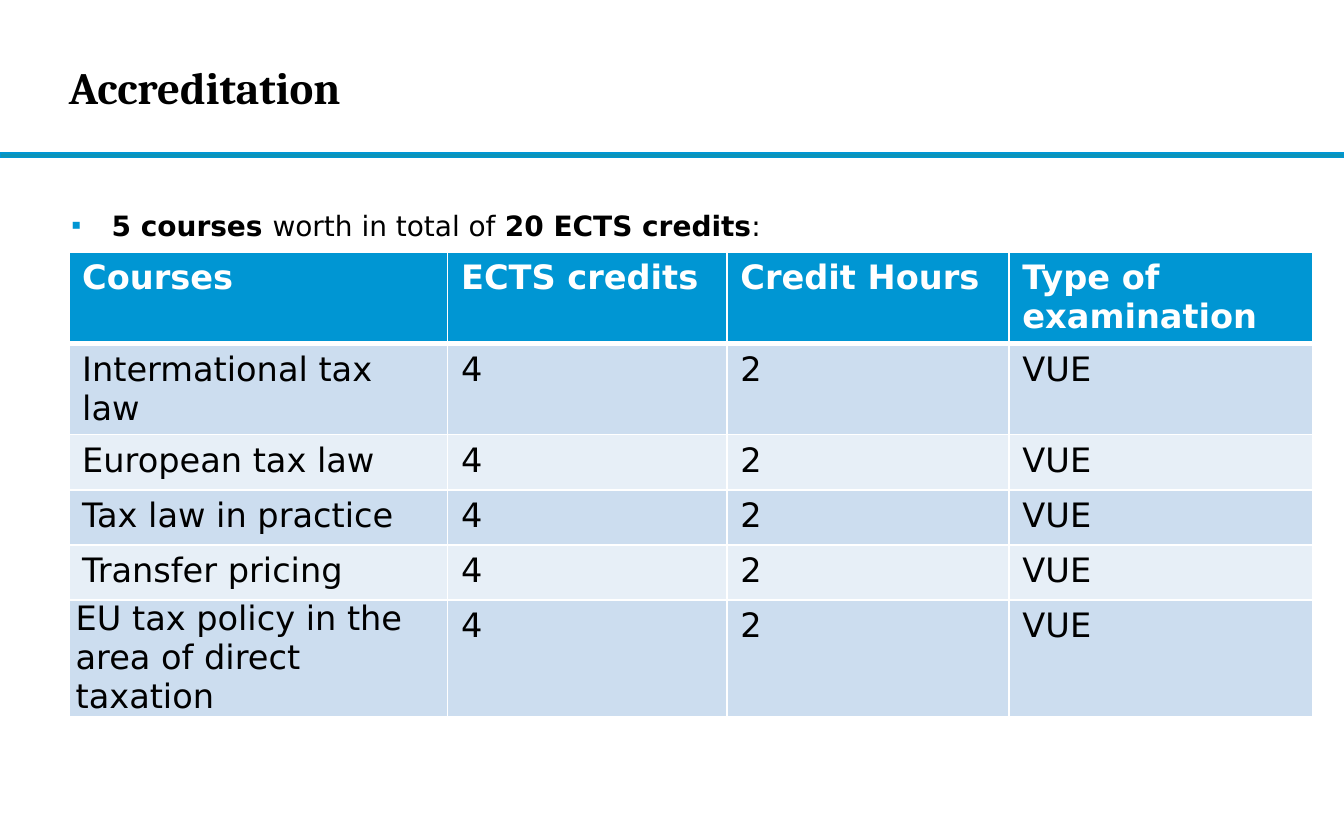
from lxml import etree
from pptx import Presentation
from pptx.dml.color import RGBColor
from pptx.enum.shapes import MSO_SHAPE
from pptx.enum.text import MSO_ANCHOR, MSO_AUTO_SIZE, PP_ALIGN
from pptx.oxml.ns import qn
from pptx.util import Cm, Pt

RECTANGLE = MSO_SHAPE.RECTANGLE
TOP, MIDDLE = MSO_ANCHOR.TOP, MSO_ANCHOR.MIDDLE
NO_FIT, LEFT = MSO_AUTO_SIZE.NONE, PP_ALIGN.LEFT

# Content
TITLE = "Accreditation"
INTRO = [("5 courses ", True), ("worth in total of ", False),
         ("20 ECTS credits", True), (":", False)]
HEADERS = ["Courses", "ECTS credits", "Credit Hours", "Type of examination"]
COURSES = ["Intermational tax law", "European tax law", "Tax law in practice",
           "Transfer pricing", "EU tax policy in the area of direct taxation"]
COURSE_VALUES = ["4", "2", "VUE"]
ROWS = [HEADERS] + [[course] + COURSE_VALUES for course in COURSES]

# Theme and layout
THEME = {
    "accent": "0096D3", "rule": "0C94B7", "bands": ("CCDDEF", "E7EFF7"),
    "text": "000000", "white": "FFFFFF",
    "heading_font": "Cambria", "body_font": "DejaVu Sans",
    "title_size": 24, "intro_size": 15, "table_size": 18,
}
COLUMN_WIDTHS = [7.16, 5.28, 5.33, 5.74]
ROW_HEIGHT = 1.04
MARGIN_LEFT = 1.3
RULE_TOP = 2.9


def set_attrs(obj, values):
    for name, value in values.items():
        setattr(obj, name, value)


def format_font(font, name, size, color, bold):
    set_attrs(font, {"name": name, "size": Pt(size), "bold": bold})
    font.color.rgb = RGBColor.from_string(color)


def place(sp, left, top, width, height):
    set_attrs(sp, {"left": Cm(left), "top": Cm(top),
                   "width": Cm(width), "height": Cm(height)})


def format_frame(tf, anchor, top=0, bottom=0):
    set_attrs(tf, {"margin_left": 0, "margin_right": 0, "margin_top": Cm(top),
                   "margin_bottom": Cm(bottom), "word_wrap": True,
                   "auto_size": NO_FIT, "vertical_anchor": anchor})


def add_bullet(p, char, color, left, hanging):
    pPr = p._p.get_or_add_pPr()
    pPr.set("marL", str(Cm(left)))
    pPr.set("indent", str(-Cm(hanging)))
    bu_color = etree.SubElement(pPr, qn("a:buClr"))
    etree.SubElement(bu_color, qn("a:srgbClr"), val=color)
    etree.SubElement(pPr, qn("a:buChar"), char=char)


def add_borders(cell, widths):
    tcPr = cell._tc.get_or_add_tcPr()
    for i, (side, width) in enumerate(widths.items()):
        ln = etree.Element(qn("a:ln" + side), w=str(Pt(width)))
        fill = etree.SubElement(ln, qn("a:solidFill"))
        etree.SubElement(fill, qn("a:srgbClr"), val=THEME["white"])
        tcPr.insert(i, ln)


def add_title(s):
    sp = s.shapes.title
    place(sp, MARGIN_LEFT, 0.38, 19, 2.51)
    format_frame(sp.text_frame, MIDDLE)
    p = sp.text_frame.paragraphs[0]
    p.alignment = LEFT
    r = p.add_run()
    r.text = TITLE
    format_font(r.font, THEME["heading_font"], THEME["title_size"], THEME["text"], True)


def add_rule(s, width):
    sp = s.shapes.add_shape(RECTANGLE, 0, Cm(RULE_TOP), width, Cm(0.08))
    sp.shadow.inherit = False
    sp.fill.solid()
    sp.fill.fore_color.rgb = RGBColor.from_string(THEME["rule"])
    sp.line.color.rgb = RGBColor.from_string(THEME["accent"])
    sp.line.width = Pt(1)


def add_intro(s):
    sp = s.placeholders[1]
    place(sp, 0.61, RULE_TOP, 24.2, 12.6)
    format_frame(sp.text_frame, TOP, top=1.04, bottom=0.13)
    p = sp.text_frame.paragraphs[0]
    set_attrs(p, {"level": 1, "space_before": Pt(0), "space_after": Pt(4)})
    add_bullet(p, "▪", THEME["accent"], left=1.5, hanging=0.76)
    for text, bold in INTRO:
        r = p.add_run()
        r.text = text
        format_font(r.font, THEME["body_font"], THEME["intro_size"], THEME["text"], bold)


def add_course_table(s):
    frame = s.shapes.add_table(
        len(ROWS), len(HEADERS), Cm(MARGIN_LEFT), Cm(4.76),
        Cm(sum(COLUMN_WIDTHS)), Cm(ROW_HEIGHT * len(ROWS)))
    table = frame.table
    for column, width in zip(table.columns, COLUMN_WIDTHS):
        column.width = Cm(width)
    for i, values in enumerate(ROWS):
        table.rows[i].height = Cm(ROW_HEIGHT)
        header = i == 0
        fill = THEME["accent"] if header else THEME["bands"][(i - 1) % 2]
        color = THEME["white"] if header else THEME["text"]
        borders = {"L": 1, "R": 1, "T": 3 if i == 1 else 1, "B": 3 if header else 1}
        for j, value in enumerate(values):
            cell = table.cell(i, j)
            cell.text = value
            cell.fill.solid()
            cell.fill.fore_color.rgb = RGBColor.from_string(fill)
            add_borders(cell, borders)
            r = cell.text_frame.paragraphs[0].runs[0]
            format_font(r.font, THEME["body_font"], THEME["table_size"], color, header)
    # The longest course name has tighter margins
    set_attrs(table.cell(len(ROWS) - 1, 0), {
        "margin_left": Cm(0.13), "margin_right": Cm(0.13),
        "margin_top": 0, "margin_bottom": 0})


def main():
    prs = Presentation()
    set_attrs(prs, {"slide_width": Cm(25.4), "slide_height": Cm(15.88)})
    s = prs.slides.add_slide(prs.slide_layouts[1])
    add_rule(s, prs.slide_width)
    add_title(s)
    add_intro(s)
    add_course_table(s)
    prs.save("out.pptx")


if __name__ == "__main__":
    main()
